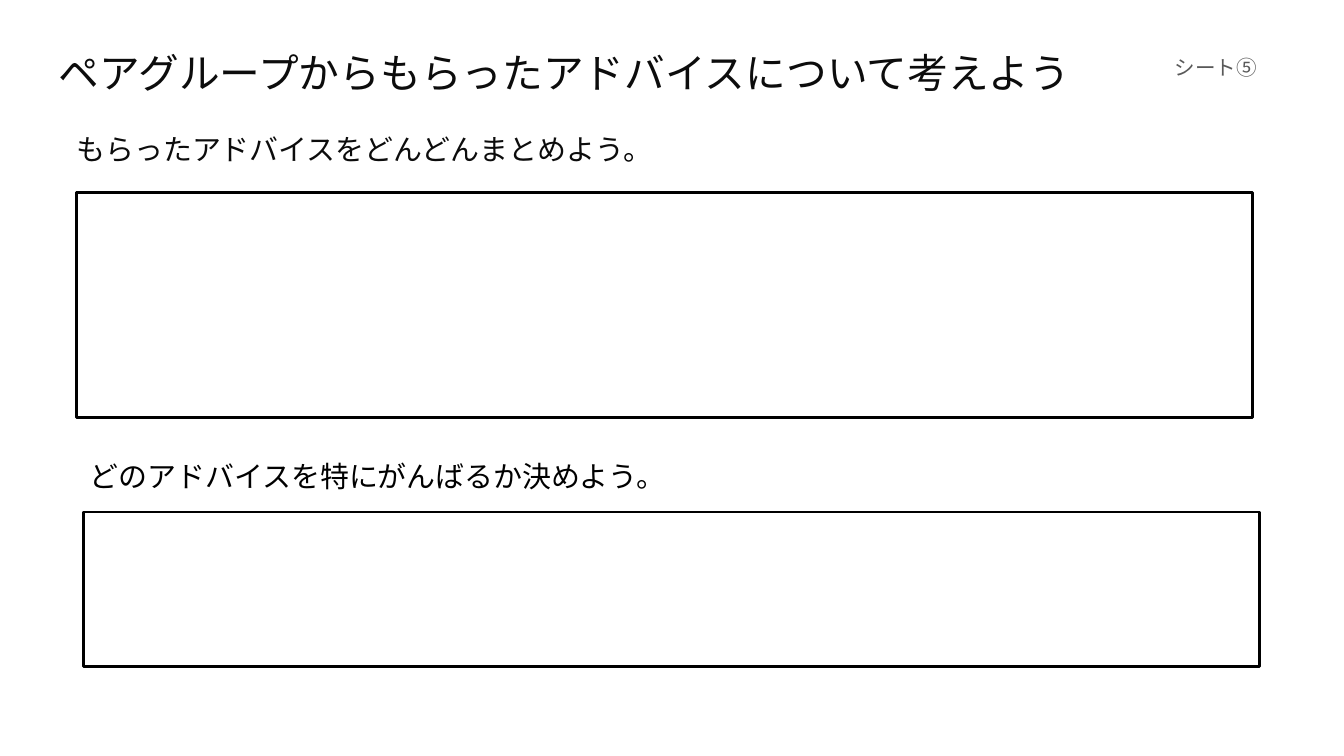
import dataclasses

import pptx
import pptx.dml.color
import pptx.enum.shapes
import pptx.enum.text
import pptx.util

WIDE = 10
HIGH = WIDE * 9 / 16
FONT = "Arial"
BLACK, INK, GRAY = "000000", "0C0C0C", "595959"


@dataclasses.dataclass
class Label:
    left: float
    top: float
    width: float
    height: float
    size: float
    runs: list[tuple[str, str]]  # text and colour


@dataclasses.dataclass
class Frame:
    left: float
    top: float
    height: float
    width: float = 8.75


LABELS = [
    # Title and sheet number
    Label(0.34, 0.26, 8.05, 0.63, 21.8,
          [("ペアグループからもらったアドバイスについて考えよう", INK)]),
    Label(8.64, 0.32, 0.85, 0.33, 11, [("シート⑤", GRAY)]),
    # Prompts above the answer frames
    Label(0.47, 0.88, 7.92, 0.41, 15.5,
          [("もらったアドバイスをどんどんまとめよう", INK), ("。", BLACK)]),
    Label(0.57, 3.31, 7.92, 0.41, 15.5,
          [("どのアドバイスを特にがんばるか決めよう。", BLACK)]),
]
FRAMES = [Frame(0.57, 1.43, 1.68), Frame(0.62, 3.81, 1.15)]


def paint(tone: str) -> pptx.dml.color.RGBColor:
    return pptx.dml.color.RGBColor.from_string(tone)


def place(part: Label | Frame) -> list[int]:
    return [pptx.util.Inches(n)
            for n in (part.left, part.top, part.width, part.height)]


def draw_label(slide, label: Label) -> None:
    text = slide.shapes.add_textbox(*place(label)).text_frame
    text.word_wrap = True
    text.vertical_anchor = pptx.enum.text.MSO_ANCHOR.TOP
    text.margin_left = text.margin_right = pptx.util.Inches(0.1)
    text.margin_top = text.margin_bottom = pptx.util.Inches(0.1)
    line = text.paragraphs[0]
    line.font.name = FONT
    line.font.size = pptx.util.Pt(label.size)
    for words, tone in label.runs:
        run = line.add_run()
        run.text = words
        run.font.color.rgb = paint(tone)


def draw_frame(slide, frame: Frame) -> None:
    kind = pptx.enum.shapes.MSO_SHAPE.RECTANGLE
    box = slide.shapes.add_shape(kind, *place(frame))
    box.shadow.inherit = False
    box.fill.background()
    box.line.color.rgb = paint(BLACK)
    box.line.width = pptx.util.Pt(1.5)


def main() -> None:
    deck = pptx.Presentation()
    deck.slide_width = pptx.util.Inches(WIDE)
    deck.slide_height = pptx.util.Inches(HIGH)
    slide = deck.slides.add_slide(deck.slide_layouts[6])
    for frame in FRAMES:
        draw_frame(slide, frame)
    for label in LABELS:
        draw_label(slide, label)
    deck.save("out.pptx")


if __name__ == "__main__":
    main()
